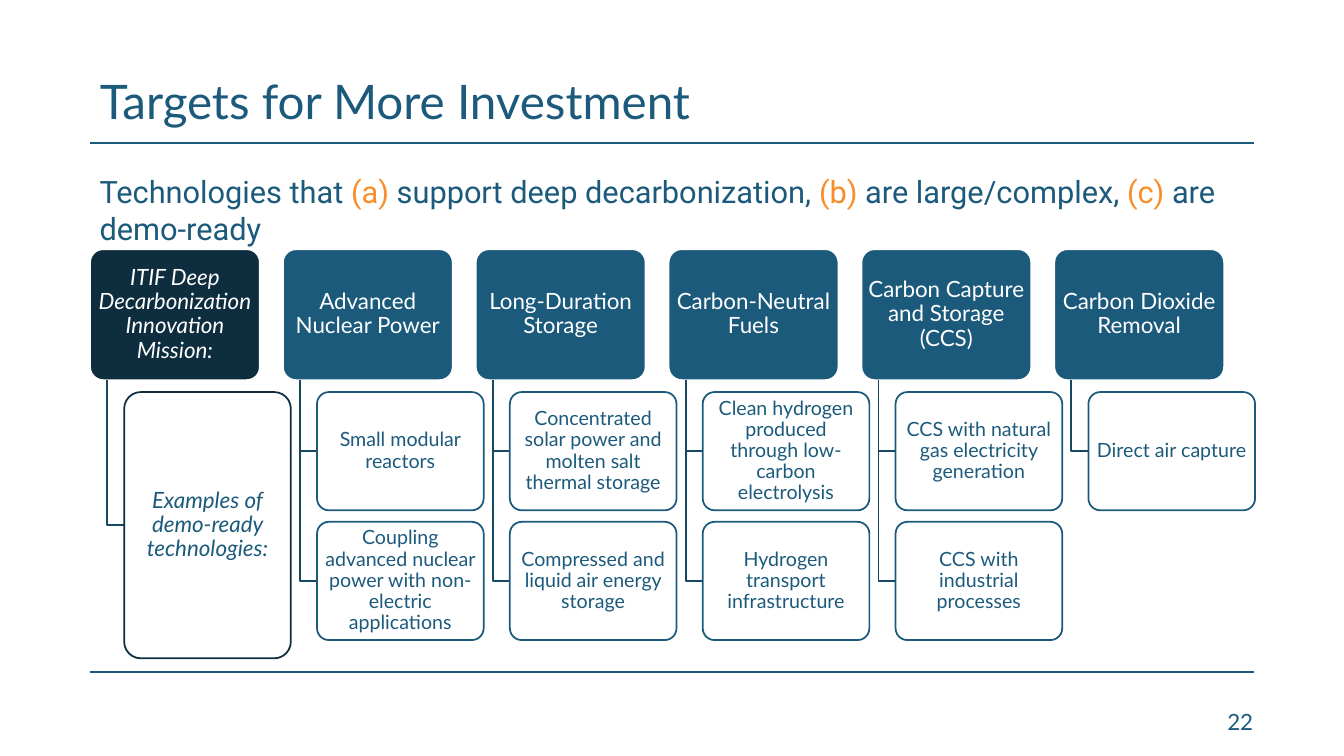
from pptx import Presentation
from pptx.dml.color import RGBColor
from pptx.enum.shapes import MSO_CONNECTOR, MSO_SHAPE
from pptx.enum.text import MSO_ANCHOR, MSO_AUTO_SIZE, PP_ALIGN
from pptx.oxml.xmlchemy import OxmlElement
from pptx.util import Cm, Pt

LINE = MSO_CONNECTOR.STRAIGHT
ROUNDED = MSO_SHAPE.ROUNDED_RECTANGLE
MIDDLE, BOTTOM = MSO_ANCHOR.MIDDLE, MSO_ANCHOR.BOTTOM
NO_FIT = MSO_AUTO_SIZE.NONE
LEFT, CENTER = PP_ALIGN.LEFT, PP_ALIGN.CENTER

BLUE = RGBColor(0x1C, 0x5A, 0x7C)
NAVY = RGBColor(0x0E, 0x2D, 0x3E)
LINK = RGBColor(0x16, 0x48, 0x63)
ORANGE = RGBColor(0xF9, 0x8D, 0x29)
WHITE = RGBColor(0xFF, 0xFF, 0xFF)

RULE_WIDTH = Pt(1.25)
COLUMN_STEP, HEAD_WIDTH, HEAD_HEIGHT = 4.86, 4.28, 3.3
ITEM_INDENT, ITEM_TOP, ITEM_STEP = 0.86, 3.6, 3.27
ITEM_WIDTH, ITEM_HEIGHT, TALL_HEIGHT = 4.2, 2.98, 6.71
STEM_INDENT = 0.43

MISSION = ("ITIF Deep Decarbonization Innovation Mission:",
           ["Examples of demo-ready technologies:"])
TARGETS = [
    ("Advanced Nuclear Power",
     ["Small modular reactors",
      "Coupling advanced nuclear power with non-electric applications"]),
    ("Long-Duration Storage",
     ["Concentrated solar power and molten salt thermal storage",
      "Compressed and liquid air energy storage"]),
    ("Carbon-Neutral Fuels",
     ["Clean hydrogen produced through low-carbon electrolysis",
      "Hydrogen transport infrastructure"]),
    ("Carbon Capture and Storage (CCS)",
     ["CCS with natural gas electricity generation",
      "CCS with industrial processes"]),
    ("Carbon Dioxide Removal", ["Direct air capture"]),
]
SUBTITLE = [
    ("Technologies that ", BLUE), ("(a)", ORANGE),
    (" support deep decarbonization, ", BLUE), ("(b)", ORANGE),
    (" are large/complex, ", BLUE), ("(c)", ORANGE), (" are demo-ready", BLUE),
]


def set_all(target, **values):
    for name, value in values.items():
        setattr(target, name, value)


def add_run(p, text, size, color, font="Lato", italic=False):
    r = p.add_run()
    r.text = text
    set_all(r.font, name=font, size=Pt(size), italic=italic)
    r.font.color.rgb = color


def add_rule(slide, x, y, width):
    line = slide.shapes.add_connector(LINE, Cm(x), Cm(y), Cm(x + width), Cm(y))
    set_all(line.line, width=RULE_WIDTH)
    line.line.color.rgb = BLUE
    line._element.spPr.append(OxmlElement("a:effectLst"))


def add_title(slide, text, x, y, width, height):
    title = slide.shapes.title
    set_all(title, left=Cm(x), top=Cm(y), width=Cm(width), height=Cm(height))
    tf = title.text_frame
    set_all(tf, auto_size=NO_FIT, vertical_anchor=BOTTOM)
    p = tf.paragraphs[0]
    p.alignment = LEFT
    add_run(p, text, 34, BLUE)


def add_text(slide, runs, size, font, x, y, width, height):
    box = slide.shapes.add_textbox(Cm(x), Cm(y), Cm(width), Cm(height))
    box.text_frame.word_wrap = True
    for text, color in runs:
        add_run(box.text_frame.paragraphs[0], text, size, color, font)


def add_card(slide, text, x, y, width, height, fill, line, color, size, italic):
    card = slide.shapes.add_shape(ROUNDED, Cm(x), Cm(y), Cm(width), Cm(height))
    card.adjustments[0] = 0.1
    card.shadow.inherit = False
    card.fill.solid()
    card.fill.fore_color.rgb = fill
    card.line.color.rgb = line
    card.line.width = RULE_WIDTH
    tf = card.text_frame
    set_all(tf, word_wrap=True, vertical_anchor=MIDDLE,
            margin_left=Cm(0.07), margin_right=Cm(0.07),
            margin_top=Cm(0.05), margin_bottom=Cm(0.05))
    p = tf.paragraphs[0]
    set_all(p, alignment=CENTER, line_spacing=0.9)
    add_run(p, text, size, color, italic=italic)


def add_elbow(slide, x, y, end_x, end_y):
    builder = slide.shapes.build_freeform(Cm(x), Cm(y))
    builder.add_line_segments(
        [(Cm(x), Cm(end_y)), (Cm(end_x), Cm(end_y))], close=False)
    elbow = builder.convert_to_shape()
    elbow.shadow.inherit = False
    elbow.fill.background()
    elbow.line.color.rgb = LINK
    elbow.line.width = RULE_WIDTH


def add_column(slide, column, x, y, accent=BLUE, item_height=ITEM_HEIGHT,
               item_size=14, italic=False):
    head, items = column
    add_card(slide, head, x, y, HEAD_WIDTH, HEAD_HEIGHT,
             accent, WHITE, WHITE, 16, italic)
    item_x = x + ITEM_INDENT
    for i, item in enumerate(items):
        item_y = y + ITEM_TOP + i * ITEM_STEP
        add_elbow(slide, x + STEM_INDENT, y + HEAD_HEIGHT,
                  item_x, item_y + item_height / 2)
        add_card(slide, item, item_x, item_y, ITEM_WIDTH, item_height,
                 WHITE, accent, BLUE, item_size, italic)


def add_targets(slide, x, y):
    add_column(slide, MISSION, x, y, NAVY, TALL_HEIGHT, 16, True)
    for i, target in enumerate(TARGETS, 1):
        add_column(slide, target, x + i * COLUMN_STEP, y)


def main():
    prs = Presentation()
    set_all(prs, slide_width=Cm(33.87), slide_height=Cm(19.05))
    s = prs.slides.add_slide(prs.slide_layouts[5])
    for y in (3.61, 16.94):
        add_rule(s, 2.26, y, 29.35)
    add_title(s, "Targets for More Investment", 2.26, 0.84, 29.35, 2.54)
    add_targets(s, 2.27, 6.28)
    add_text(s, [("22", BLUE)], 16, "Lato", 30.68, 17.73, 1.27, 0.79)
    add_text(s, SUBTITLE, 22, "Roboto", 2.26, 4.24, 30.56, 1.19)
    prs.save("out.pptx")


if __name__ == "__main__":
    main()
